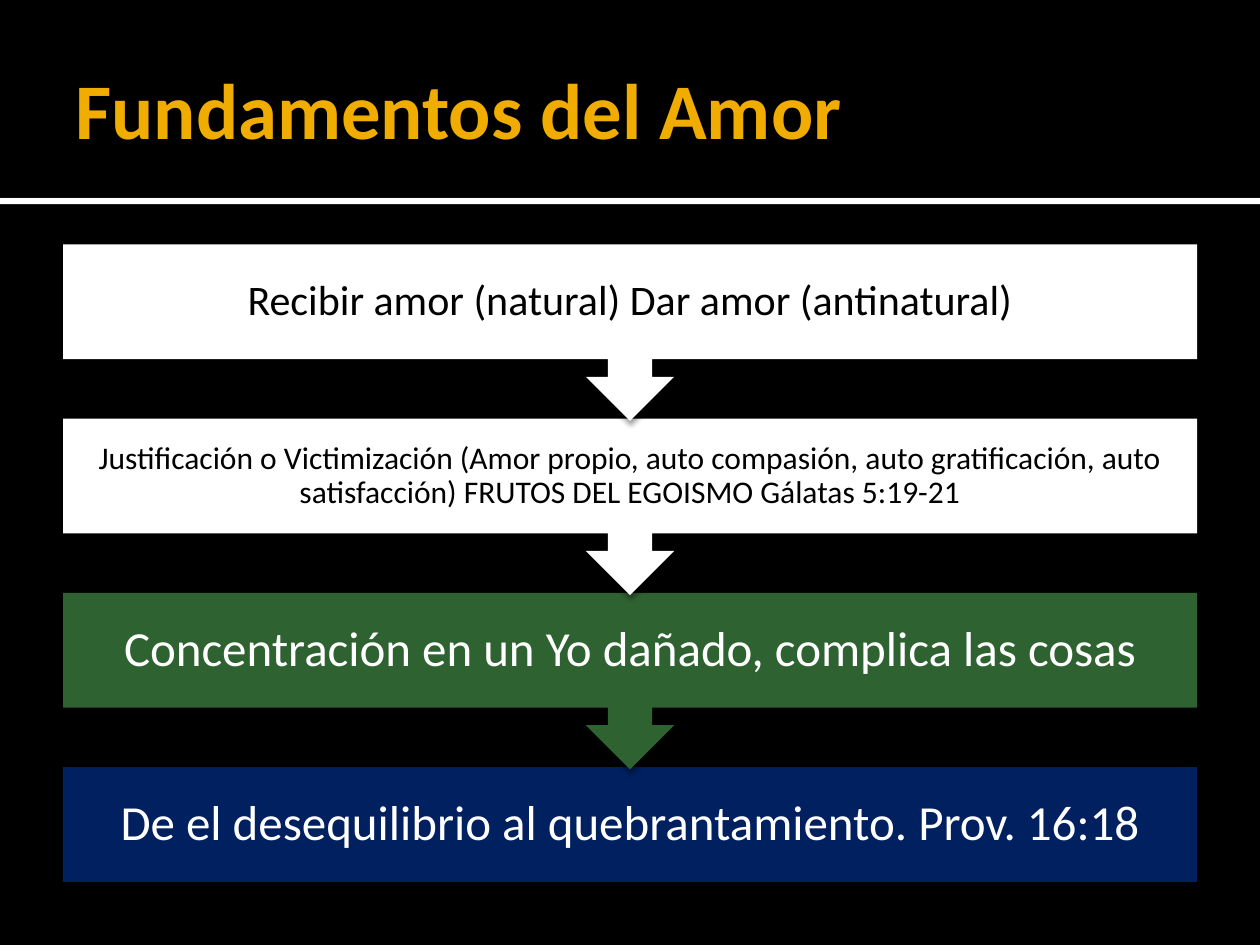
from lxml import etree
from pptx import Presentation
from pptx import util as u
from pptx.dml.color import RGBColor
from pptx.enum import shapes, text
from pptx.oxml import ns

TITLE = "Fundamentos del Amor"
STEPS = [
    {"text": "Recibir amor (natural) Dar amor (antinatural)",
     "size": 24, "inset": 0.19, "fill": "FFFFFF", "color": "000000"},
    {"text": "Justificación o Victimización (Amor propio, auto compasión, auto gratificación, "
             "auto satisfacción) FRUTOS DEL EGOISMO Gálatas 5:19-21",
     "size": 18, "inset": 0.14, "fill": "FFFFFF", "color": "000000"},
    {"text": "Concentración en un Yo dañado, complica las cosas",
     "size": 28, "inset": 0.22, "fill": "2F6231", "color": "FFFFFF"},
    {"text": "De el desequilibrio al quebrantamiento. Prov. 16:18",
     "size": 28, "inset": 0.22, "fill": "002060", "color": "FFFFFF"},
]
LEFT, WIDTH, TOP, PITCH = 0.5, 9, 1.94, 1.383
BOX_HEIGHT, CALLOUT_HEIGHT = 0.91, 1.4
HEADER_HEIGHT, RULE_HEIGHT = 1.57, 0.05


def rgb(value):
    """Turn a hex string into a colour."""
    return RGBColor.from_string(value)


def inches(*values):
    """Turn numbers into a list of lengths."""
    return [u.Inches(value) for value in values]


def add_shadow(shape, opacity, blur, distance):
    """Give a shape a soft black shadow falling straight down."""
    shape.shadow.inherit = False
    effects = shape.element.spPr.find(ns.qn("a:effectLst"))
    outer = etree.SubElement(effects, ns.qn("a:outerShdw"), blurRad=str(u.Pt(blur)),
                             dist=str(u.Pt(distance)), dir="5400000", rotWithShape="0")
    color = etree.SubElement(outer, ns.qn("a:srgbClr"), val="000000")
    etree.SubElement(color, ns.qn("a:alpha"), val=str(opacity * 1000))


def add_block(slide, kind, box, fill):
    """Add a plain filled shape without outline or shadow."""
    shape = slide.shapes.add_shape(kind, *inches(*box))
    shape.shadow.inherit = False
    shape.fill.solid()
    shape.fill.fore_color.rgb = rgb(fill)
    shape.line.fill.background()
    return shape


def write_text(shape, words, insets, alignment, size, color, bold=False):
    """Fill a shape with one formatted paragraph."""
    frame = shape.text_frame
    frame.text = words
    left, top, right, bottom = inches(*insets)
    frame_format = {"margin_left": left, "margin_top": top, "margin_right": right,
                    "margin_bottom": bottom, "word_wrap": True,
                    "auto_size": text.MSO_AUTO_SIZE.NONE,
                    "vertical_anchor": text.MSO_ANCHOR.MIDDLE}
    for name, value in frame_format.items():
        setattr(frame, name, value)
    paragraph = frame.paragraphs[0]
    paragraph.alignment = alignment
    font = paragraph.runs[0].font
    for name, value in {"name": "Calibri", "size": u.Pt(size), "bold": bold}.items():
        setattr(font, name, value)
    font.color.rgb = rgb(color)
    return paragraph


def add_header(slide):
    """Place the header band, its rule and the title."""
    title = slide.shapes.title
    title.left, title.top, title.width, title.height = inches(0.5, 0.17, 9, 1.37)
    rectangle = shapes.MSO_SHAPE.RECTANGLE
    rule = add_block(slide, rectangle, (0, HEADER_HEIGHT, 10, RULE_HEIGHT), "FFFFFF")
    add_shadow(rule, 60, 2.5, 0.8)
    band = add_block(slide, rectangle, (0, 0, 10, HEADER_HEIGHT), "000000")
    for shape in (rule, band):
        title.element.addprevious(shape.element)
    write_text(title, TITLE, (0.1, 0.05, 0.05, 0.05), text.PP_ALIGN.LEFT, 45, "F0AD00", True)


def add_step(slide, index, step):
    """Add one step, with an arrow down unless it is the last."""
    top = TOP + index * PITCH
    last = index == len(STEPS) - 1
    kind = shapes.MSO_SHAPE.RECTANGLE if last else shapes.MSO_SHAPE.UP_ARROW_CALLOUT
    height = BOX_HEIGHT if last else CALLOUT_HEIGHT
    block = add_block(slide, kind, (LEFT, top, WIDTH, height), step["fill"])
    block.rotation = 0 if last else 180
    add_shadow(block, 38, 3.1, 2)
    label = slide.shapes.add_textbox(*inches(LEFT, top, WIDTH, BOX_HEIGHT))
    paragraph = write_text(label, step["text"], [step["inset"]] * 4, text.PP_ALIGN.CENTER,
                           step["size"], step["color"])
    paragraph.line_spacing = 0.9


def main():
    """Build the slide and save it."""
    presentation = Presentation()
    presentation.slide_width, presentation.slide_height = inches(10, 7.5)
    slide = presentation.slides.add_slide(presentation.slide_layouts[5])
    slide.background.fill.solid()
    slide.background.fill.fore_color.rgb = rgb("000000")
    add_header(slide)
    for index, step in reversed(list(enumerate(STEPS))):
        add_step(slide, index, step)
    presentation.save("out.pptx")


if __name__ == "__main__":
    main()
